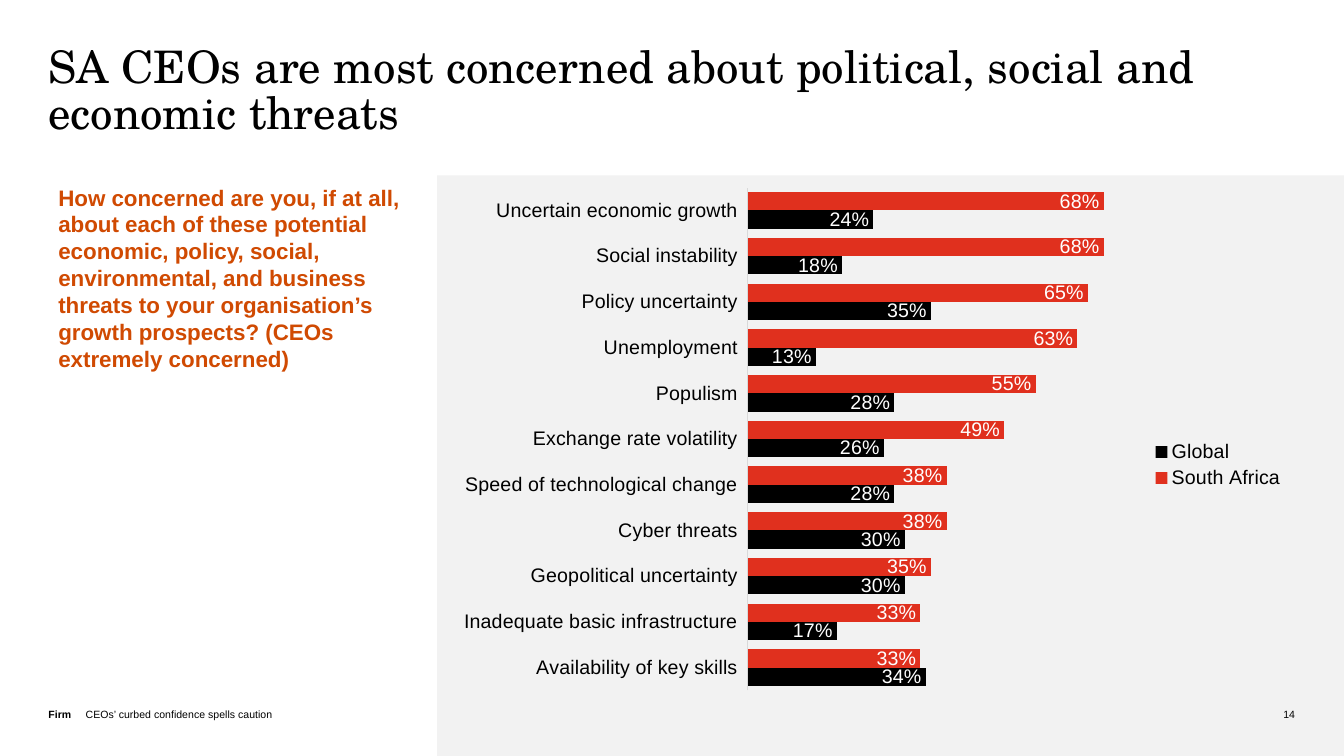
from lxml import etree
from pptx import Presentation
from pptx.chart.data import CategoryChartData
from pptx.dml.color import RGBColor
from pptx.enum.chart import XL_CHART_TYPE, XL_LABEL_POSITION, XL_LEGEND_POSITION, XL_TICK_LABEL_POSITION, XL_TICK_MARK
from pptx.enum.shapes import MSO_SHAPE
from pptx.enum.text import MSO_ANCHOR, MSO_AUTO_SIZE, PP_ALIGN
from pptx.oxml import parse_xml
from pptx.oxml.ns import qn
from pptx.util import Cm, Pt

BAR_CLUSTERED = XL_CHART_TYPE.BAR_CLUSTERED
INSIDE_END = XL_LABEL_POSITION.INSIDE_END
LEGEND_RIGHT = XL_LEGEND_POSITION.RIGHT
LABELS_LOW = XL_TICK_LABEL_POSITION.LOW
NO_TICKS = XL_TICK_MARK.NONE
RECTANGLE = MSO_SHAPE.RECTANGLE
TOP, BOTTOM = MSO_ANCHOR.TOP, MSO_ANCHOR.BOTTOM
LEFT, RIGHT = PP_ALIGN.LEFT, PP_ALIGN.RIGHT
NO_AUTOFIT = MSO_AUTO_SIZE.NONE

BLACK = RGBColor(0x00, 0x00, 0x00)
WHITE = RGBColor(0xFF, 0xFF, 0xFF)
ORANGE = RGBColor(0xD0, 0x4A, 0x02)
RED = RGBColor(0xE0, 0x30, 0x1E)
PANEL_GREY = RGBColor(0xF2, 0xF2, 0xF2)
AXIS_GREY = RGBColor(0xD9, 0xD9, 0xD9)
CHART_NS = "http://schemas.openxmlformats.org/drawingml/2006/chart"
DRAWING_NS = "http://schemas.openxmlformats.org/drawingml/2006/main"

THREATS = [
    ("Uncertain economic growth", 0.68, 0.24),
    ("Social instability", 0.68, 0.18),
    ("Policy uncertainty", 0.65, 0.35),
    ("Unemployment", 0.63, 0.13),
    ("Populism", 0.55, 0.28),
    ("Exchange rate volatility", 0.49, 0.26),
    ("Speed of technological change", 0.38, 0.28),
    ("Cyber threats", 0.38, 0.30),
    ("Geopolitical uncertainty", 0.35, 0.30),
    ("Inadequate basic infrastructure", 0.33, 0.17),
    ("Availability of key skills", 0.33, 0.34),
]


def write(box, text, size=7.5, font="Arial", color=BLACK, bold=False,
          align=LEFT, anchor=BOTTOM, inset=(0, 0), spacing=1.0):
    frame = box.text_frame
    frame.word_wrap = True
    frame.auto_size = NO_AUTOFIT
    frame.vertical_anchor = anchor
    frame.margin_left = frame.margin_right = Cm(inset[0])
    frame.margin_top = frame.margin_bottom = Cm(inset[1])
    paragraph = frame.paragraphs[0]
    paragraph.alignment = align
    paragraph.line_spacing = spacing
    run = paragraph.add_run()
    run.text = text
    run.font.name = font
    run.font.size = Pt(size)
    run.font.bold = bold
    run.font.color.rgb = color


prs = Presentation()
prs.slide_width = Cm(33.87)
prs.slide_height = Cm(19.05)
slide = prs.slides.add_slide(prs.slide_layouts[5])
shapes = slide.shapes

panel = shapes.add_shape(RECTANGLE, Cm(11.02), Cm(4.42), Cm(22.85), Cm(14.63))
panel.shadow.inherit = False
panel.fill.solid()
panel.fill.fore_color.rgb = PANEL_GREY
panel.line.fill.background()

title = shapes.title
title.left, title.top, title.width, title.height = Cm(1.22), Cm(1.19), Cm(31.4), Cm(3.86)
write(title, "SA CEOs are most concerned about political, social and economic threats",
      size=32, font="TeX Gyre Schola", anchor=TOP, spacing=0.85)

question = shapes.add_textbox(Cm(1.22), Cm(4.5), Cm(9.8), Cm(5.05))
write(question, "How concerned are you, if at all, about each of these potential economic, "
      "policy, social, environmental, and business threats to your organisation’s growth "
      "prospects? (CEOs extremely concerned)",
      size=16, color=ORANGE, bold=True, anchor=TOP, inset=(0.25, 0.13))

for left, width, text, bold, align in [
    (1.22, 0.84, "Firm", True, LEFT),
    (2.16, 14.27, "CEOs’ curbed confidence spells caution", False, LEFT),
    (31.47, 1.17, "14", False, RIGHT),
]:
    footer = shapes.add_textbox(Cm(left), Cm(17.78), Cm(width), Cm(0.38))
    write(footer, text, bold=bold, align=align)

names, south_africa, world = zip(*THREATS)
survey = CategoryChartData(number_format="0%")
survey.categories = names
survey.add_series("South Africa", south_africa)
survey.add_series("Global", world)
chart = shapes.add_chart(BAR_CLUSTERED, Cm(11.02), Cm(4.42), Cm(21.62), Cm(14.6), survey).chart
chart.has_title = False
chart.font.name = "Arial"
chart.font.size = Pt(14)
chart.font.color.rgb = BLACK
chart.has_legend = True
chart.legend.position = LEGEND_RIGHT
chart.legend.include_in_layout = False

threat_axis = chart.category_axis
threat_axis.reverse_order = True
threat_axis.major_tick_mark = NO_TICKS
threat_axis.minor_tick_mark = NO_TICKS
threat_axis.tick_label_position = LABELS_LOW
threat_axis.format.line.color.rgb = AXIS_GREY
threat_axis.format.line.width = Pt(0.75)
share_axis = chart.value_axis
share_axis.visible = False
share_axis.has_major_gridlines = False
share_axis.minimum_scale = 0
share_axis.maximum_scale = 1

bars = chart.plots[0]
bars.gap_width = 50
bars.overlap = 0
bars.vary_by_categories = False
for series, color in zip(bars.series, (RED, BLACK)):
    series.format.fill.solid()
    series.format.fill.fore_color.rgb = color
    labels = series.data_labels
    labels.show_value = True
    labels.position = INSIDE_END
    labels.number_format = "0%"
    labels.number_format_is_linked = False
    labels.font.name = "Arial"
    labels.font.size = Pt(14)
    labels.font.color.rgb = WHITE

chart_space = chart.element
plot_area = chart_space.find(".//" + qn("c:plotArea"))
for old_layout in plot_area.findall(qn("c:layout")):
    plot_area.remove(old_layout)
layout = etree.Element(qn("c:layout"))
manual = etree.SubElement(layout, qn("c:manualLayout"))
for tag, value in [("layoutTarget", "inner"), ("xMode", "edge"), ("yMode", "edge"),
                   ("x", "0.362"), ("y", "0.021"), ("w", "0.61"), ("h", "0.868")]:
    etree.SubElement(manual, qn("c:" + tag)).set("val", value)
plot_area.insert(0, layout)

clear = (f'<c:spPr xmlns:c="{CHART_NS}" xmlns:a="{DRAWING_NS}">'
         '<a:noFill/><a:ln><a:noFill/></a:ln></c:spPr>')
plot_area.append(parse_xml(clear))
chart_space.find(qn("c:chart")).addnext(parse_xml(clear))

prs.save("out.pptx")
